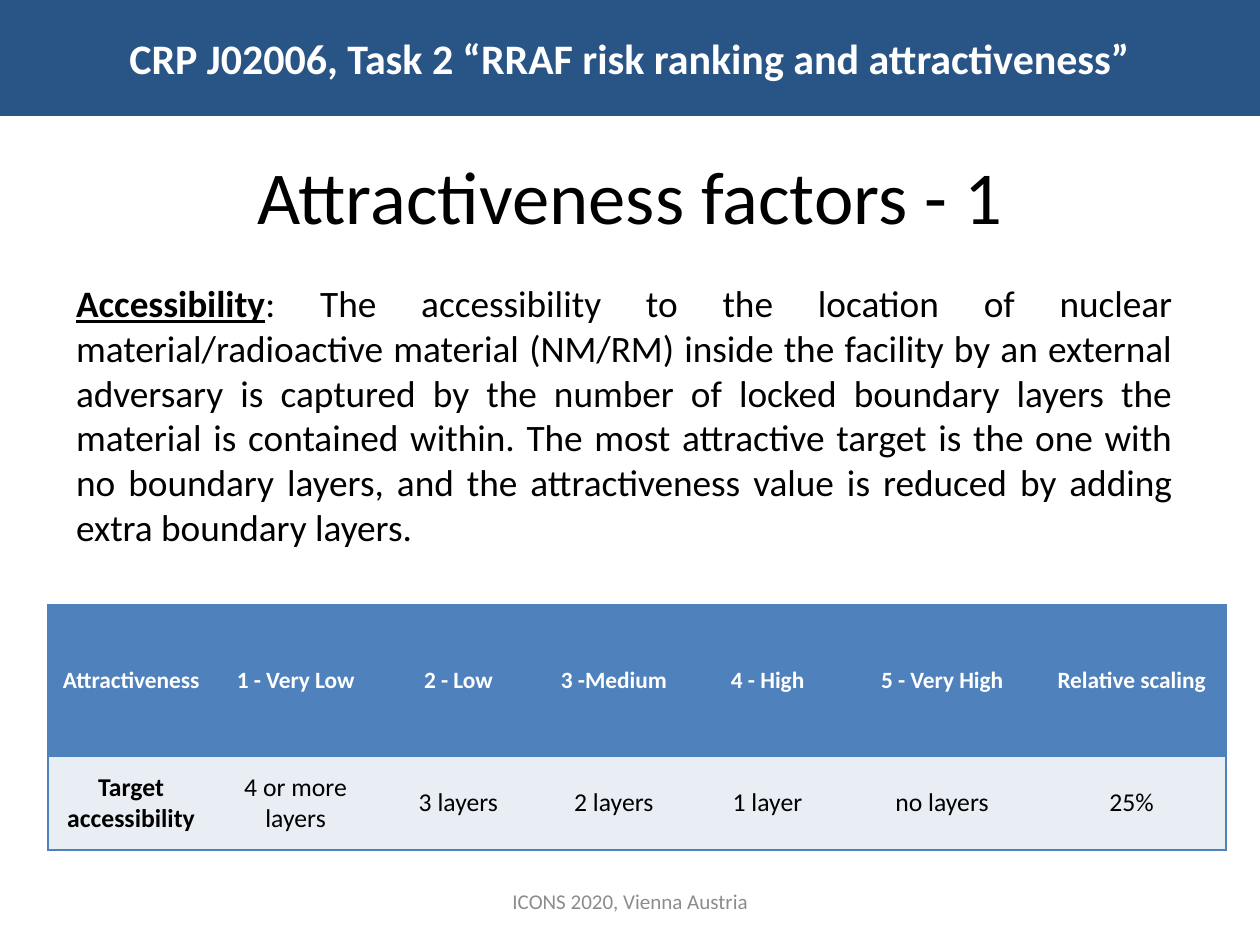
from lxml.etree import SubElement
from pptx import Presentation
from pptx.dml.color import RGBColor
from pptx.enum.shapes import MSO_SHAPE
from pptx.enum.text import MSO_ANCHOR, PP_ALIGN
from pptx.oxml.ns import qn
from pptx.util import Pt

BANNER = "CRP J02006, Task 2 “RRAF risk ranking and attractiveness”"
TITLE = "Attractiveness factors - 1"
TERM = "Accessibility"
DEFINITION = (
    ": The accessibility to the location of nuclear material/radioactive material (NM/RM) "
    "inside the facility by an external adversary is captured by the number of locked "
    "boundary layers the material is contained within. The most attractive target is the "
    "one with no boundary layers, and the attractiveness value is reduced by adding extra "
    "boundary layers."
)
FOOTER = "ICONS 2020, Vienna Austria"
ROWS = [
    ["Attractiveness", "1 - Very Low", "2 - Low", "3 -Medium", "4 - High",
     "5 - Very High", "Relative scaling"],
    ["Target accessibility", "4 or more layers", "3 layers", "2 layers", "1 layer",
     "no layers", "25%"],
]
COL_WIDTHS = [71.2, 69.8, 69.8, 63.4, 68.4, 81.2, 81.2]
ROW_HEIGHTS = [64.8, 40.4]
COLORS = {"banner": "295586", "white": "FFFFFF", "black": "000000",
          "header": "4F81BD", "body": "E9EDF4", "footer": "8C8C8C"}
FONT = "Calibri"
WIDTH, HEIGHT = 540, 405


def color(name):
    return RGBColor.from_string(COLORS[name])


def style(p, size, color_name, bold=False, align=PP_ALIGN.CENTER):
    p.alignment = align
    p.font.name, p.font.size, p.font.bold = FONT, Pt(size), bold
    p.font.color.rgb = color(color_name)


def set_frame(sp, anchor=MSO_ANCHOR.MIDDLE):
    """Set wrapping, anchor and insets, and return the first paragraph."""
    tf = sp.text_frame
    tf.word_wrap = True
    tf.vertical_anchor = anchor
    tf.margin_left = tf.margin_right = Pt(5.4)
    tf.margin_top = tf.margin_bottom = Pt(2.7)
    return tf.paragraphs[0]


def add_text(slide, box, text, size, color_name):
    p = set_frame(slide.shapes.add_textbox(*map(Pt, box)))
    p.text = text
    style(p, size, color_name)


def set_borders(cell, first, last):
    """Draw top and bottom edges, and side edges only at the table's ends."""
    tcPr = cell._tc.get_or_add_tcPr()
    for tag, shown in (("lnL", first), ("lnR", last), ("lnT", True), ("lnB", True)):
        ln = SubElement(tcPr, qn(f"a:{tag}"), w=str(Pt(1)))
        if shown:
            fill = SubElement(ln, qn("a:solidFill"))
            SubElement(fill, qn("a:srgbClr"), val=COLORS["header"])
        else:
            SubElement(ln, qn("a:noFill"))


def add_banner(slide):
    sp = slide.shapes.add_shape(MSO_SHAPE.RECTANGLE, 0, 0, Pt(WIDTH), Pt(49.7))
    sp.shadow.inherit = False
    sp.fill.solid()
    sp.fill.fore_color.rgb = color("banner")
    sp.line.fill.background()
    p = set_frame(sp)
    p.text = BANNER
    style(p, 18, "white", bold=True)


def add_definition(slide):
    box = (27.2, 117.4, 481, 119.5)
    p = set_frame(slide.shapes.add_textbox(*map(Pt, box)), MSO_ANCHOR.TOP)
    style(p, 16, "black", align=PP_ALIGN.JUSTIFY)
    p.space_before = Pt(3.2)
    term = p.add_run()
    term.text = TERM
    term.font.bold = term.font.underline = True
    p.add_run().text = DEFINITION


def add_scale_table(slide):
    table = slide.shapes.add_table(
        len(ROWS), len(COL_WIDTHS), Pt(20.6), Pt(259.2),
        Pt(sum(COL_WIDTHS)), Pt(sum(ROW_HEIGHTS))).table
    for col, width in zip(table.columns, COL_WIDTHS):
        col.width = Pt(width)
    for i, (row, height) in enumerate(zip(ROWS, ROW_HEIGHTS)):
        table.rows[i].height = Pt(height)
        header = i == 0
        for j, text in enumerate(row):
            cell = table.cell(i, j)
            set_borders(cell, j == 0, j == len(row) - 1)
            cell.fill.solid()
            cell.fill.fore_color.rgb = color("header" if header else "body")
            cell.vertical_anchor = MSO_ANCHOR.MIDDLE
            cell.margin_left = cell.margin_right = Pt(5)
            cell.margin_top = cell.margin_bottom = 0
            p = cell.text_frame.paragraphs[0]
            p.text = text
            p.space_after = Pt(6)
            style(p, 10 if header else 11, "white" if header else "black",
                  bold=header or j == 0)


def main():
    prs = Presentation()
    prs.slide_width, prs.slide_height = Pt(WIDTH), Pt(HEIGHT)
    slide = prs.slides.add_slide(prs.slide_layouts[6])
    add_banner(slide)
    add_text(slide, (27, 49.7, 486, 67.7), TITLE, 32, "black")
    add_definition(slide)
    add_scale_table(slide)
    add_text(slide, (184.5, 375.4, 171, 21.6), FOOTER, 9, "footer")
    prs.save("out.pptx")


if __name__ == "__main__":
    main()
